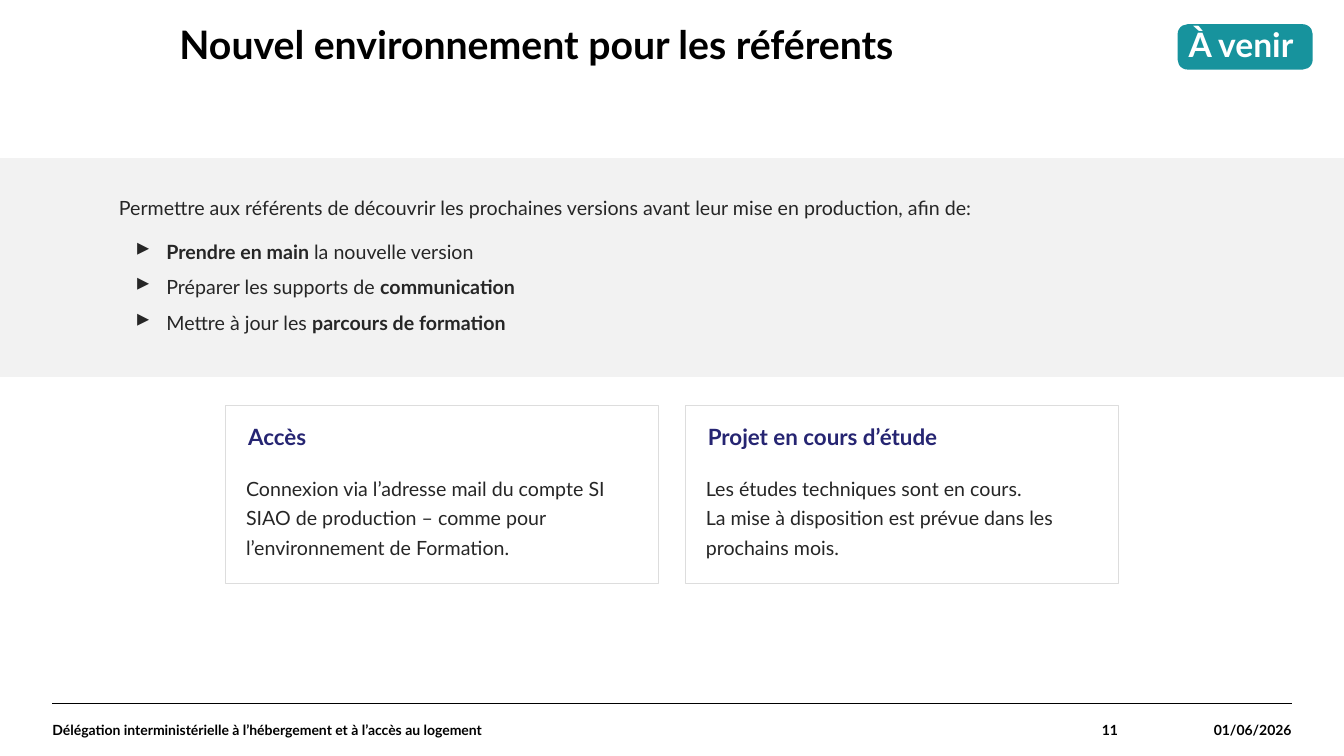
import pptx
import pptx.dml.color
import pptx.enum.shapes
import pptx.enum.text
import pptx.oxml.ns
import pptx.util
from lxml import etree

RGBColor = pptx.dml.color.RGBColor
Inches = pptx.util.Inches
Pt = pptx.util.Pt
ALIGN = pptx.enum.text.PP_ALIGN
ANCHOR = pptx.enum.text.MSO_ANCHOR
SHAPE = pptx.enum.shapes.MSO_SHAPE

BLACK = RGBColor(0x00, 0x00, 0x00)
WHITE = RGBColor(0xFF, 0xFF, 0xFF)
INK = RGBColor(0x26, 0x26, 0x26)
NAVY = RGBColor(0x26, 0x25, 0x72)
TEAL = RGBColor(0x17, 0x93, 0x9D)
BAND = RGBColor(0xF2, 0xF2, 0xF2)
BORDER = RGBColor(0xDD, 0xDD, 0xDD)

FONT = "Lato"
W, H = 13.33, 7.5
MARGIN = 0.52

INTRO = ("Permettre aux référents de découvrir les prochaines versions "
         "avant leur mise en production, afin de:")
GOALS = ["*Prendre en main *la nouvelle version",
         "Préparer les supports de *communication*",
         "Mettre à jour les *parcours de formation*"]
CARDS = [
    ("Accès",
     "Connexion via l’adresse mail du compte SI SIAO de production – comme pour "
     "l’environnement de Formation."),
    ("Projet en cours d’étude",
     "Les études techniques sont en cours.\n"
     "La mise à disposition est prévue dans les prochains mois."),
]


def write(p, text, size=14, color=INK, bold=False, align=ALIGN.LEFT, spacing=1.0,
          before=0, after=0):
    """Fill a paragraph; asterisks switch bold, newlines break the line."""
    p.alignment = align
    p.line_spacing = spacing
    p.space_before, p.space_after = Pt(before), Pt(after)
    for i, part in enumerate(text.split("*")):
        for j, line in enumerate(part.split("\n")):
            if j:
                p.add_line_break()
            if line:
                r = p.add_run()
                r.text = line
                r.font.name, r.font.size = FONT, Pt(size)
                r.font.bold = bold or i % 2 == 1
                r.font.color.rgb = color


def add_bullet(p, char="▸", percent=125, left=0.47, hanging=0.31):
    pPr = p._p.get_or_add_pPr()
    pPr.set("marL", str(Inches(left)))
    pPr.set("indent", str(-Inches(hanging)))
    qn = pptx.oxml.ns.qn
    etree.SubElement(pPr, qn("a:buSzPct")).set("val", str(percent * 1000))
    etree.SubElement(pPr, qn("a:buChar")).set("char", char)


def set_frame(sp, insets=(0, 0, 0, 0), anchor=ANCHOR.TOP):
    tf = sp.text_frame
    tf.word_wrap = True
    tf.vertical_anchor = anchor
    (tf.margin_left, tf.margin_top,
     tf.margin_right, tf.margin_bottom) = map(Inches, insets)
    return tf


def add_text(slide, box, text, insets=(0, 0, 0, 0), anchor=ANCHOR.TOP, **fmt):
    sp = slide.shapes.add_textbox(*map(Inches, box))
    write(set_frame(sp, insets, anchor).paragraphs[0], text, **fmt)


def add_panel(slide, box, fill, line=None, kind=SHAPE.RECTANGLE):
    sp = slide.shapes.add_shape(kind, *map(Inches, box))
    sp.shadow.inherit = False
    sp.fill.solid()
    sp.fill.fore_color.rgb = fill
    if line is None:
        sp.line.fill.background()
    else:
        sp.line.color.rgb = line
        sp.line.width = Pt(0.75)
    return sp


def add_title(slide, box, text):
    sp = slide.shapes.title
    sp.left, sp.top, sp.width, sp.height = map(Inches, box)
    tf = set_frame(sp)
    tf.auto_size = pptx.enum.text.MSO_AUTO_SIZE.NONE
    write(tf.paragraphs[0], text, size=28, color=BLACK, bold=True, spacing=0.9)


def add_badge(slide, box, text):
    sp = add_panel(slide, box, TEAL, kind=SHAPE.ROUNDED_RECTANGLE)
    sp.adjustments[0] = 0.22
    tf = set_frame(sp, (0.08, 0, 0.08, 0.01), ANCHOR.MIDDLE)
    write(tf.paragraphs[0], text, size=24, color=WHITE, bold=True, spacing=0.95)


def add_goals(slide, box):
    sp = add_panel(slide, box, BAND)
    tf = set_frame(sp, (1.18, 0.16, 1.18, 0.24), ANCHOR.MIDDLE)
    write(tf.paragraphs[0], INTRO, spacing=1.14, after=6)
    for goal in GOALS:
        p = tf.add_paragraph()
        write(p, goal, spacing=1.14, before=6)
        add_bullet(p)


def add_card(slide, box, heading, body):
    x, y, w, h = box
    pad = 0.2
    add_panel(slide, box, WHITE, BORDER)
    add_text(slide, (x + pad, y + pad, w - 2 * pad, 0.26), heading,
             insets=(0.02, 0, 0, 0), size=16, color=NAVY, bold=True, spacing=0.95)
    add_text(slide, (x + pad, y + 0.65, w - 2 * pad, 0.85), body, spacing=1.25)


def add_cards(slide, box, gap=0.27):
    x, y, w, h = box
    card_w = (w - gap * (len(CARDS) - 1)) / len(CARDS)
    for i, (heading, body) in enumerate(CARDS):
        add_card(slide, (x + i * (card_w + gap), y, card_w, h), heading, body)


def add_footer(slide, box):
    x, y, w, h = box
    rule = slide.shapes.add_connector(
        pptx.enum.shapes.MSO_CONNECTOR.STRAIGHT,
        Inches(x), Inches(y), Inches(x + w), Inches(y))
    rule.line.color.rgb = BLACK
    rule.line.width = Pt(0.8)
    etree.SubElement(rule._element.spPr, pptx.oxml.ns.qn("a:effectLst"))
    columns = [
        (0.70, "Délégation interministérielle à l’hébergement et à l’accès au logement",
         ALIGN.LEFT),
        (0.16, "11", ALIGN.RIGHT),
        (0.14, "01/06/2026", ALIGN.RIGHT),
    ]
    for share, text, align in columns:
        add_text(slide, (x, y, share * w, h), text, anchor=ANCHOR.MIDDLE,
                 size=10, color=BLACK, bold=True, align=align)
        x += share * w


def main():
    prs = pptx.Presentation()
    prs.slide_width, prs.slide_height = Inches(W), Inches(H)
    slide = prs.slides.add_slide(prs.slide_layouts[5])
    add_title(slide, (1.78, 0.25, 11.02, 0.42), "Nouvel environnement pour les référents")
    add_badge(slide, (11.68, 0.24, 1.34, 0.45), "À venir")
    add_goals(slide, (0, 1.57, W, 2.17))
    add_cards(slide, (2.24, 4.02, 8.85, 1.77))
    add_footer(slide, (MARGIN, H - MARGIN, W - 2 * MARGIN, MARGIN))
    prs.save("out.pptx")


if __name__ == "__main__":
    main()
